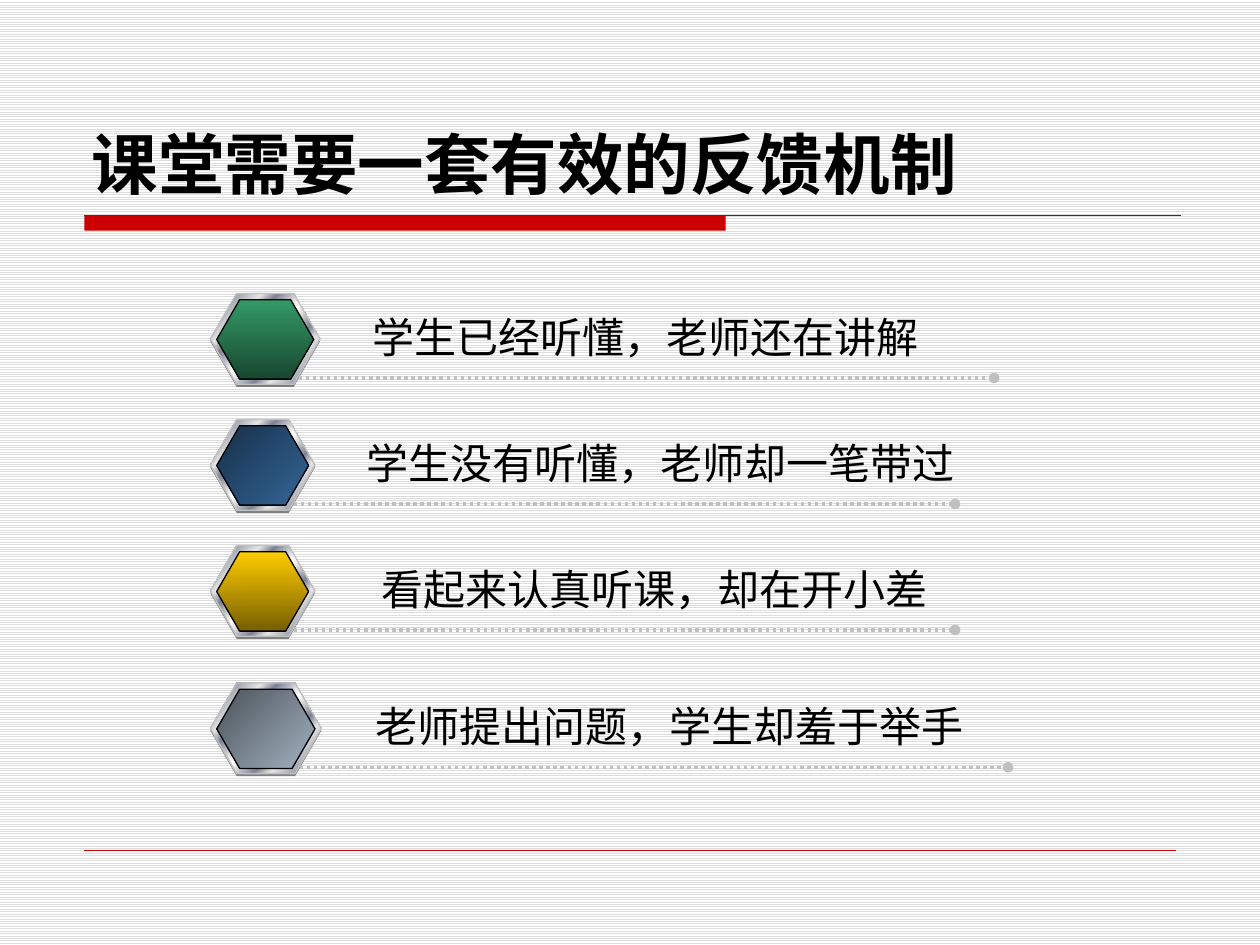
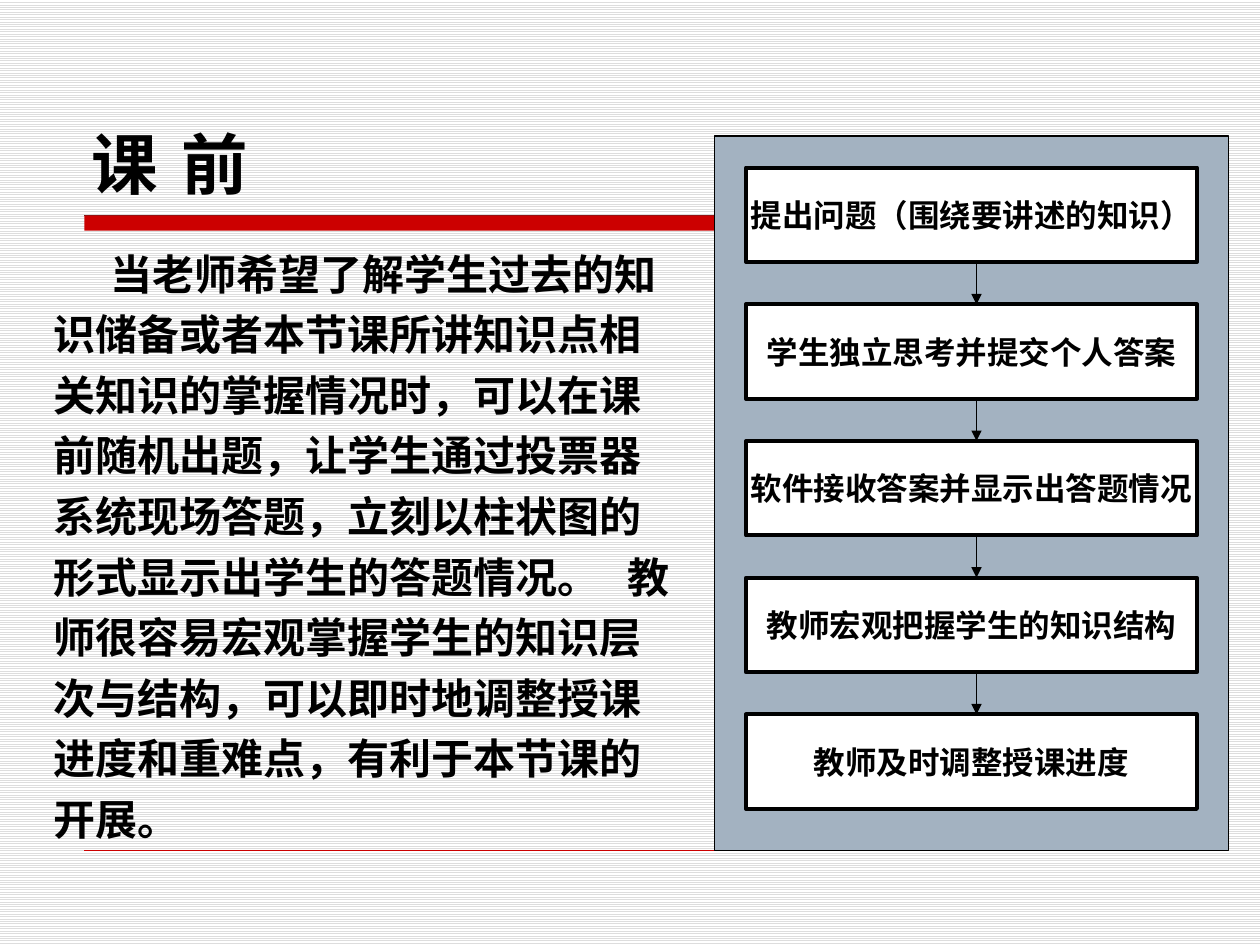
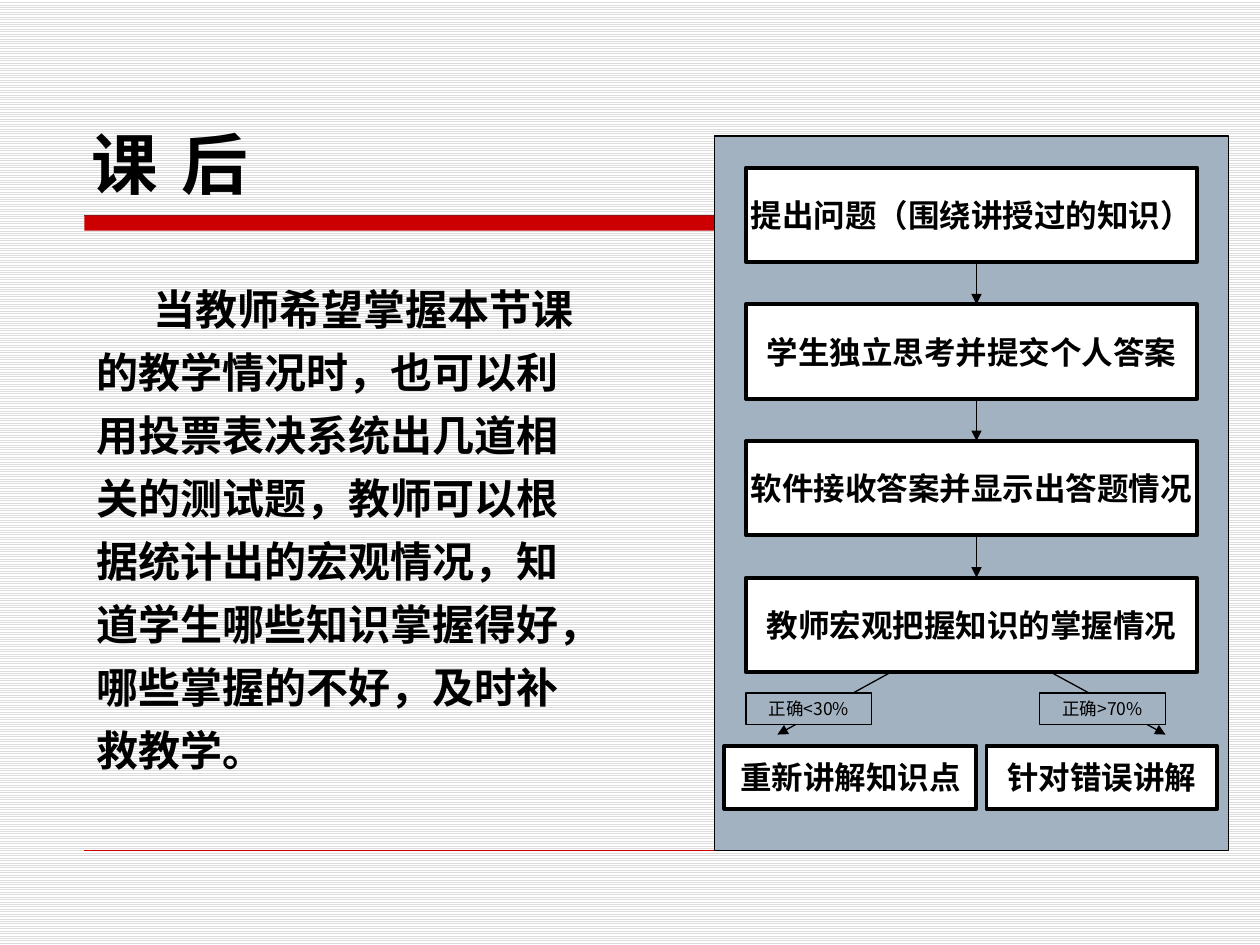
from lxml.etree import SubElement
from pptx import Presentation
from pptx.dml.color import RGBColor
from pptx.enum.dml import MSO_LINE, MSO_PATTERN
from pptx.enum.shapes import MSO_CONNECTOR, MSO_SHAPE
from pptx.enum.text import MSO_ANCHOR, PP_ALIGN
from pptx.oxml.ns import qn
from pptx.util import Inches, Pt

BLACK = RGBColor(0x00, 0x00, 0x00)
WHITE = RGBColor(0xFF, 0xFF, 0xFF)
RED = RGBColor(0xCC, 0x00, 0x00)
STRIPE = RGBColor(0xDD, 0xDD, 0xDD)
CHARCOAL = RGBColor(0x33, 0x33, 0x33)
SHADOW = RGBColor(0x80, 0x80, 0x80)
SILVER = RGBColor(0xC0, 0xC0, 0xC0)
PANEL = RGBColor(0xA3, 0xB2, 0xC1)
LIGHT = RGBColor(0xE6, 0xE6, 0xE6)
STEEL = RGBColor(0x7D, 0x84, 0x96)

METAL = [(0, LIGHT), (8, STEEL), (26, LIGHT), (34, STEEL), (46, LIGHT), (50, WHITE),
         (54, LIGHT), (66, STEEL), (74, LIGHT), (92, STEEL), (100, LIGHT)]
GREEN_FADE = [(0, RGBColor(0x33, 0x99, 0x66)), (100, RGBColor(0x18, 0x47, 0x2F))]
BLUE_FADE = [(0, RGBColor(0x18, 0x2F, 0x47)), (100, RGBColor(0x33, 0x66, 0x99))]
YELLOW_FADE = [(0, RGBColor(0xFF, 0xCC, 0x00)), (100, RGBColor(0x76, 0x5E, 0x00))]
GREY_FADE = [(0, RGBColor(0x4B, 0x53, 0x5A)), (100, PANEL)]

SANS = "DejaVu Sans"
CJK = "Noto Sans CJK SC"

FLOW_TOP, FLOW_STEP, FLOW_HEIGHT, FLOW_CENTER = 1.33, 1.085, 0.75, 7.75


class Deck:
    """Holds the shared style and the slide being built."""

    def __init__(self):
        self.presentation = Presentation()
        self.presentation.slide_width = Inches(10)
        self.presentation.slide_height = Inches(7.5)
        self.slide = None

    def start_slide(self, title, font=CJK):
        self.slide = self.presentation.slides.add_slide(self.presentation.slide_layouts[6])
        fill = self.slide.background.fill
        fill.patterned()
        fill.pattern = MSO_PATTERN.LIGHT_HORIZONTAL
        fill.fore_color.rgb = STRIPE
        fill.back_color.rgb = WHITE
        self.line((0.67, 1.71), (9.37, 1.71), CHARCOAL)
        self.shape((0.67, 1.71, 5.09, 0.12), RED)
        self.line((0.67, 6.75), (9.33, 6.75), RED, 0.25)
        self.text((0.63, 0.33, 8.75, 1.33), [title], 38, font, True, anchor=MSO_ANCHOR.BOTTOM)

    def add_run(self, paragraph, text, size, font, bold):
        """The East Asian font is set too, since it decides the line height."""
        run = paragraph.add_run()
        run.text = text
        run.font.size = Pt(size)
        run.font.bold = bold
        run.font.color.rgb = BLACK
        run.font.name = font
        SubElement(run.font._element, qn("a:ea")).set("typeface", SANS)
        return run

    def text(self, place, pieces, size, font=SANS, bold=False, anchor=MSO_ANCHOR.TOP,
             line_height=None, left_indent=0, first_indent=0, gap_after_piece=0):
        """Writes one paragraph; each piece but the last ends with a gap in points."""
        frame = self.slide.shapes.add_textbox(*map(Inches, place)).text_frame
        frame.word_wrap = True
        frame.vertical_anchor = anchor
        paragraph = frame.paragraphs[0]
        if line_height:
            paragraph.line_spacing = Pt(line_height)
        properties = paragraph._p.get_or_add_pPr()
        properties.set("marL", str(Inches(left_indent)))
        properties.set("indent", str(Inches(first_indent)))
        for piece in pieces[:-1]:
            self.add_run(paragraph, piece[:-1], size, font, bold)
            spaced = self.add_run(paragraph, piece[-1], size, font, bold)
            spaced.font._element.set("spc", str(gap_after_piece * 100))
        self.add_run(paragraph, pieces[-1], size, font, bold)

    def shape(self, place, color=None, line=None, width=0.75, kind=MSO_SHAPE.RECTANGLE):
        shape = self.slide.shapes.add_shape(kind, *map(Inches, place))
        shape.shadow.inherit = False
        if color is not None:
            shape.fill.solid()
            shape.fill.fore_color.rgb = color
        if line is None:
            shape.line.fill.background()
        else:
            shape.line.color.rgb = line
            shape.line.width = Pt(width)
        return shape

    def label_box(self, place, text, size=18, font=SANS, bold=True, color=WHITE, width=2.25):
        frame = self.shape(place, color, BLACK, width).text_frame
        frame.word_wrap = False
        frame.vertical_anchor = MSO_ANCHOR.MIDDLE
        paragraph = frame.paragraphs[0]
        paragraph.alignment = PP_ALIGN.CENTER
        self.add_run(paragraph, text, size, font, bold)

    def hexagon(self, place, color=None, line=None, stops=None, angle=45):
        shape = self.shape(place, color, line, kind=MSO_SHAPE.HEXAGON)
        shape.adjustments[0] = 0.289
        if stops:
            shape.fill.gradient()
            shape.fill.gradient_angle = 360 - angle
            stop_list = shape.element.spPr.find(qn("a:gradFill")).find(qn("a:gsLst"))
            stop_list.clear()
            for position, stop_color in stops:
                stop = SubElement(stop_list, qn("a:gs"), pos=str(position * 1000))
                SubElement(stop, qn("a:srgbClr"), val=str(stop_color))

    def line(self, start, end, color=BLACK, width=0.75, dash=None, end_mark=None):
        connector = self.slide.shapes.add_connector(
            MSO_CONNECTOR.STRAIGHT, *map(Inches, start + end))
        connector.line.color.rgb = color
        connector.line.width = Pt(width)
        if dash:
            connector.line.dash_style = dash
        if end_mark:
            SubElement(connector.line._get_or_add_ln(), qn("a:tailEnd"), type=end_mark)
        SubElement(connector._element.spPr, qn("a:effectLst"))

    def arrow(self, start, end):
        self.line(start, end, end_mark="triangle")

    def bullet_row(self, top, width, line_end, stops, angle, text_left, text_indent, text):
        """Draws a framed hexagon, its dotted line and the sentence above the line."""
        left = 1.67
        self.hexagon((left, top + 0.02, width, 0.72), SHADOW)
        self.hexagon((left, top, width, 0.72), line=SILVER, stops=METAL)
        self.hexagon((left + 0.05, top + 0.05, width - 0.1, 0.63),
                     line=BLACK, stops=stops, angle=angle)
        self.line((left + width - 0.17, top + 0.67), (line_end, top + 0.67),
                  SILVER, 2, MSO_LINE.ROUND_DOT, "oval")
        self.text((text_left, top + 0.09, 5.75, 0.5), [text], 24, left_indent=text_indent)

    def flow_panel(self, steps):
        self.shape((5.67, 1.08, 4.08, 5.67), PANEL, BLACK)
        for index, step in enumerate(steps):
            top = FLOW_TOP + index * FLOW_STEP
            self.label_box((5.92, top, 3.58, FLOW_HEIGHT), step)
            if index:
                self.arrow((FLOW_CENTER, top - FLOW_STEP + FLOW_HEIGHT), (FLOW_CENTER, top))


def build_feedback_slide(deck):
    deck.start_slide("课堂需要一套有效的反馈机制", SANS)
    rows = [
        (2.33, 0.87, 7.89, GREEN_FADE, 90, 2.67, 0.19, "学生已经听懂，老师还在讲解"),
        (3.33, 0.83, 7.58, BLUE_FADE, 45, 2.62, 0.19, "学生没有听懂，老师却一笔带过"),
        (4.33, 0.83, 7.58, YELLOW_FADE, 90, 2.93, 0, "看起来认真听课，却在开小差"),
        (5.42, 0.88, 8, GREY_FADE, 45, 2.69, 0.19, "老师提出问题，学生却羞于举手"),
    ]
    for row in rows:
        deck.bullet_row(*row)


def build_before_class_slide(deck):
    deck.start_slide("课 前")
    deck.text((0.33, 1.84, 5.17, 4.89), [
        "当老师希望了解学生过去的知识储备或者本节课所讲知识点相关知识的掌握情况时，"
        "可以在课前随机出题，让学生通过投票器系统现场答题，"
        "立刻以柱状图的形式显示出学生的答题情况。",
        "教师很容易宏观掌握学生的知识层次与结构，可以即时地调整授课进度和重难点，"
        "有利于本节课的开展。",
    ], 24, bold=True, line_height=34.6, first_indent=0.45, gap_after_piece=16)
    deck.flow_panel([
        "提出问题（围绕要讲述的知识）",
        "学生独立思考并提交个人答案",
        "软件接收答案并显示出答题情况",
        "教师宏观把握学生的知识结构",
        "教师及时调整授课进度",
    ])


def build_after_class_slide(deck):
    deck.start_slide("课 后")
    deck.text((0.67, 2.1, 4.08, 4.1), [
        "当教师希望掌握本节课的教学情况时，也可以利用投票表决系统出几道相关的测试题，"
        "教师可以根据统计出的宏观情况，知道学生哪些知识掌握得好，哪些掌握的不好，"
        "及时补救教学。",
    ], 24, bold=True, line_height=36, first_indent=0.45)
    deck.flow_panel([
        "提出问题（围绕讲授过的知识）",
        "学生独立思考并提交个人答案",
        "软件接收答案并显示出答题情况",
        "教师宏观把握知识的掌握情况",
    ])
    branches = [
        (7.08, 6.17, 5.75, 2, "重新讲解知识点", 5.92, "正确<30%"),
        (8.33, 9.25, 7.83, 1.83, "针对错误讲解", 8.25, "正确>70%"),
    ]
    for start, end, left, width, action, condition_left, condition in branches:
        deck.arrow((start, 5.33), (end, 5.83))
        deck.label_box((left, 5.92, width, 0.5), action)
        deck.label_box((condition_left, 5.5, 1, 0.25), condition, 10, CJK, False, PANEL, 0.75)


def main():
    deck = Deck()
    build_feedback_slide(deck)
    build_before_class_slide(deck)
    build_after_class_slide(deck)
    deck.presentation.save("out.pptx")


if __name__ == "__main__":
    main()
